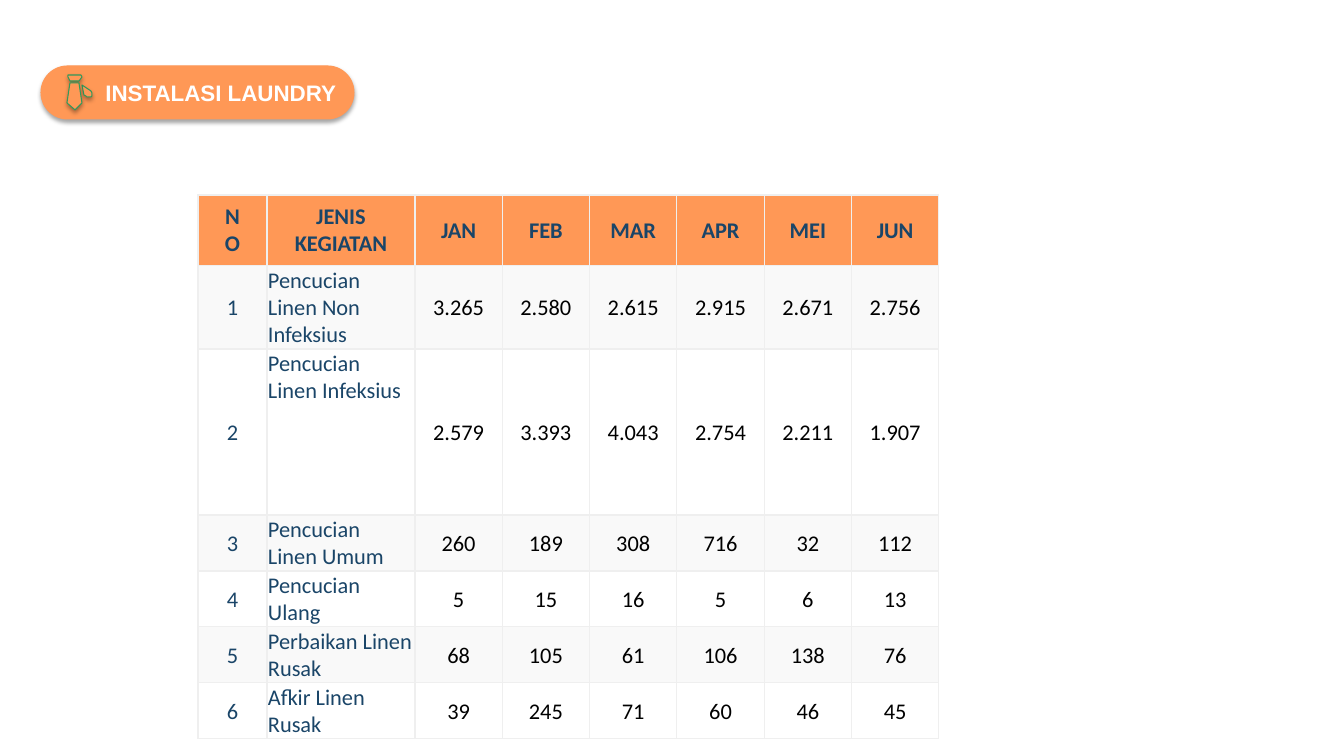
import pptx
import pptx.dml.color
import pptx.enum.shapes
import pptx.enum.text
import pptx.oxml
import pptx.oxml.ns
import pptx.util

TITLE = "INSTALASI LAUNDRY"
HEADERS = ["NO", "JENIS KEGIATAN", "JAN", "FEB", "MAR", "APR", "MEI", "JUN"]
ACTIVITIES = [
    ("Pencucian Linen Non Infeksius", ["3.265", "2.580", "2.615", "2.915", "2.671", "2.756"]),
    ("Pencucian Linen Infeksius", ["2.579", "3.393", "4.043", "2.754", "2.211", "1.907"]),
    ("Pencucian Linen Umum", ["260", "189", "308", "716", "32", "112"]),
    ("Pencucian Ulang", ["5", "15", "16", "5", "6", "13"]),
    ("Perbaikan Linen Rusak", ["68", "105", "61", "106", "138", "76"]),
    ("Afkir Linen Rusak", ["39", "245", "71", "60", "46", "45"]),
]
COLORS = {
    "orange": "FF9856", "navy": "1A4568", "black": "000000", "white": "FFFFFF",
    "band": "F9F9F9", "border": "EFEFEF", "green": "32995B",
}
TIE_PARTS = [
    [(82, 85), (84, 95), (86, 96), (87, 97), (91, 97), (92, 96), (92, 93), (91, 91)],
    [(69, 75), (68, 75), (68, 77), (70, 81), (79, 81), (82, 77), (81, 75), (80, 75)],
    [(70, 83), (67, 103), (74, 109), (75, 110), (76, 109), (82, 103), (79, 83)],
]
SLIDE_SIZE = (1344, 756)
BADGE_BOX = (41, 66, 313, 53)
TABLE_LEFT, TABLE_TOP, TABLE_WIDTH = 198, 195, 741
NUMBER_WIDTH, ACTIVITY_WIDTH = 69, 148
ROW_HEIGHTS = [70, 83, 166, 56, 56, 56, 56]
HEADER_MARGINS = (20, 8, 20, 8)
BODY_MARGINS = (1, 1, 1, 0)
TALL_ROW = 2
EMU_PER_PX = 914400 / 100.8

ALIGN = pptx.enum.text.PP_ALIGN
ANCHOR = pptx.enum.text.MSO_ANCHOR


def px(length):
    return pptx.util.Emu(round(length * EMU_PER_PX))


def rgb(name):
    return pptx.dml.color.RGBColor.from_string(COLORS[name])


def write_text(text_frame, text, font="Calibri", color="black", bold=False, align=ALIGN.CENTER):
    text_frame.word_wrap = True
    paragraph = text_frame.paragraphs[0]
    paragraph.alignment = align
    run = paragraph.add_run()
    run.text = text
    run.font.name = font
    run.font.size = pptx.util.Pt(16)
    run.font.bold = bold
    run.font.color.rgb = rgb(color)


def style_shape(shape, line):
    shape.fill.solid()
    shape.fill.fore_color.rgb = rgb("orange")
    shape.line.color.rgb = rgb(line)
    shape.line.width = pptx.util.Pt(0.75)
    shape.shadow.inherit = False
    effects = shape._element.spPr.find(pptx.oxml.ns.qn("a:effectLst"))
    effects.append(pptx.oxml.parse_xml(
        f'<a:outerShdw {pptx.oxml.ns.nsdecls("a")} blurRad="40000" dist="23000" '
        f'dir="5400000" rotWithShape="0"><a:srgbClr val="{COLORS["black"]}">'
        '<a:alpha val="35000"/></a:srgbClr></a:outerShdw>'))


def style_cell(cell, fill, margins, anchor):
    cell.fill.solid()
    cell.fill.fore_color.rgb = rgb(fill)
    cell.margin_left, cell.margin_top, cell.margin_right, cell.margin_bottom = map(px, margins)
    cell.vertical_anchor = anchor
    properties = cell._tc.get_or_add_tcPr()
    for index, side in enumerate("LRTB"):
        properties.insert(index, pptx.oxml.parse_xml(
            f'<a:ln{side} {pptx.oxml.ns.nsdecls("a")} w="12700"><a:solidFill>'
            f'<a:srgbClr val="{COLORS["border"]}"/></a:solidFill></a:ln{side}>'))


def add_table(slide):
    month_count = len(HEADERS) - 2
    month_width = (TABLE_WIDTH - NUMBER_WIDTH - ACTIVITY_WIDTH) / month_count
    widths = [NUMBER_WIDTH, ACTIVITY_WIDTH] + [month_width] * month_count
    rows = [HEADERS] + [[str(number), activity, *counts]
                        for number, (activity, counts) in enumerate(ACTIVITIES, 1)]
    table = slide.shapes.add_table(
        len(rows), len(HEADERS), px(TABLE_LEFT), px(TABLE_TOP),
        px(TABLE_WIDTH), px(sum(ROW_HEIGHTS))).table
    table.first_row = False
    table.horz_banding = False
    for column, width in zip(table.columns, widths):
        column.width = px(width)
    for row_index, values in enumerate(rows):
        table.rows[row_index].height = px(ROW_HEIGHTS[row_index])
        header = row_index == 0
        fill = "orange" if header else "band" if row_index % 2 else "white"
        margins = HEADER_MARGINS if header else BODY_MARGINS
        for column_index, value in enumerate(values):
            cell = table.cell(row_index, column_index)
            activity = column_index == 1 and not header
            top = activity and row_index == TALL_ROW
            style_cell(cell, fill, margins, ANCHOR.TOP if top else ANCHOR.MIDDLE)
            write_text(cell.text_frame, value, bold=header,
                       color="navy" if header or column_index < 2 else "black",
                       align=ALIGN.LEFT if activity else ALIGN.CENTER)


def add_badge(slide):
    group = slide.shapes.add_group_shape()
    badge = group.shapes.add_shape(
        pptx.enum.shapes.MSO_SHAPE.ROUNDED_RECTANGLE, *map(px, BADGE_BOX))
    badge.adjustments[0] = 0.5
    style_shape(badge, "orange")
    badge.text_frame.vertical_anchor = ANCHOR.MIDDLE
    write_text(badge.text_frame, TITLE, font="Arial", color="white", bold=True, align=ALIGN.RIGHT)
    for points in TIE_PARTS:
        builder = group.shapes.build_freeform(*points[0], scale=EMU_PER_PX)
        builder.add_line_segments(points[1:], close=True)
        style_shape(builder.convert_to_shape(), "green")


def main():
    presentation = pptx.Presentation()
    presentation.slide_width, presentation.slide_height = map(px, SLIDE_SIZE)
    slide = presentation.slides.add_slide(presentation.slide_layouts[6])
    add_table(slide)
    add_badge(slide)
    presentation.save("out.pptx")


if __name__ == "__main__":
    main()
